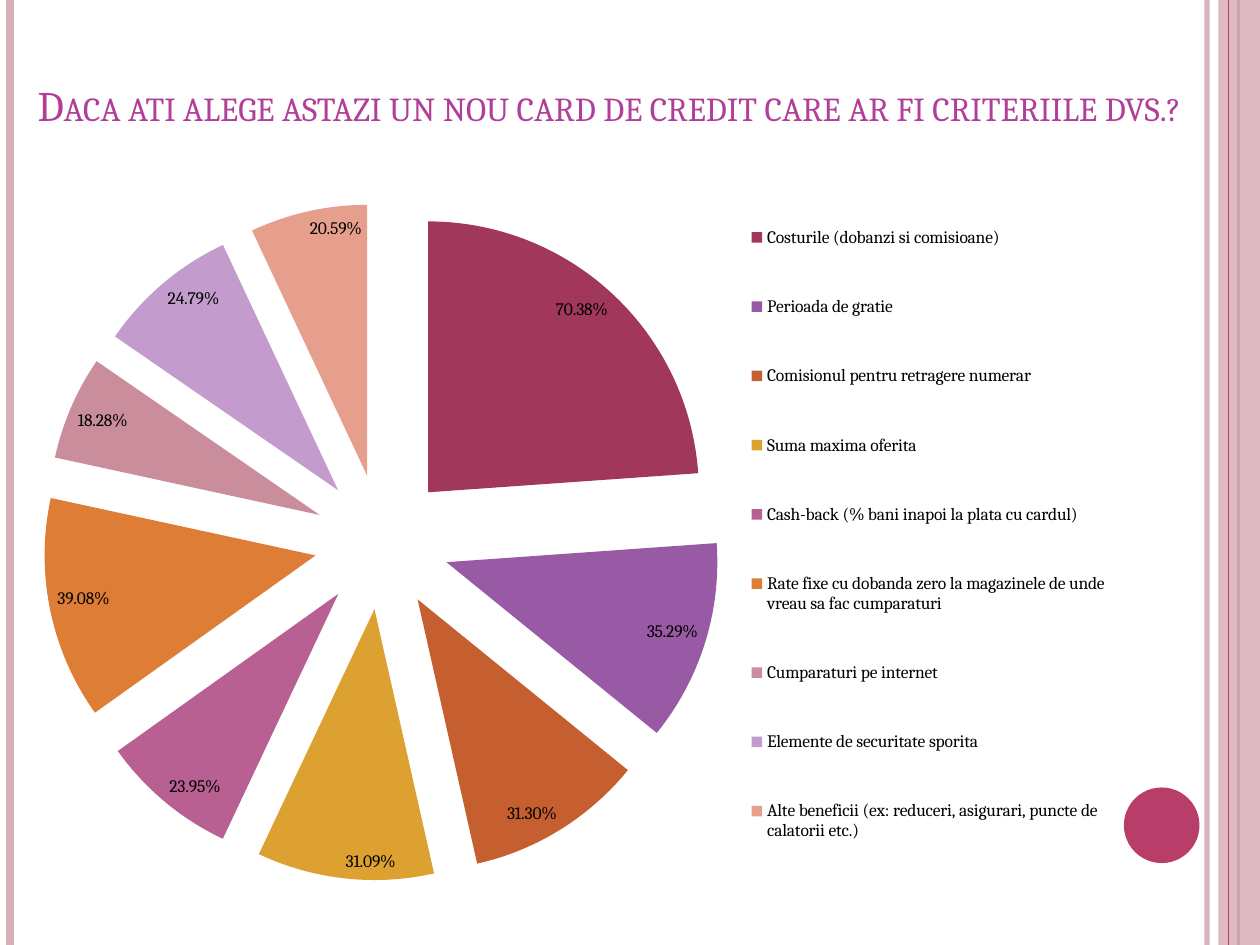
from dataclasses import dataclass

from pptx import Presentation
from pptx import util as u
from pptx.chart.data import CategoryChartData
from pptx.dml.color import RGBColor
from pptx.enum import chart as ch, shapes, text
from pptx.oxml import parse_xml
from pptx.oxml.ns import nsdecls, qn


@dataclass(frozen=True)
class Theme:
    font: str = "Cambria"
    title_size: int = 24
    chart_size: int = 10
    title: str = "B13F9A"
    ink: str = "000000"
    rose: str = "D8AFB9"
    berry: str = "B83D68"


@dataclass(frozen=True)
class Rule:
    x: float
    color: str
    width: float
    opacity: int = 100


@dataclass(frozen=True)
class Criterion:
    label: str
    share: float
    color: str


THEME = Theme()
PAGE_WIDTH, PAGE_HEIGHT = 10, 7.5
TITLE = "Daca ati alege astazi un nou card de credit care ar fi criteriile dvs.?"

RULES_BEHIND = [
    Rule(9.58, THEME.rose, 3, 93),
    Rule(0.08, THEME.rose, 4.5),
    Rule(9.83, THEME.berry, 1.5),
]
RULE_IN_FRONT = Rule(9.75, THEME.berry, 0.75)

CRITERIA = [
    Criterion("Costurile (dobanzi si comisioane)", 0.7038, "A1375B"),
    Criterion("Perioada de gratie", 0.3529, "985AA5"),
    Criterion("Comisionul pentru retragere numerar", 0.3130, "C55F2F"),
    Criterion("Suma maxima oferita", 0.3109, "DDA132"),
    Criterion("Cash-back (% bani inapoi la plata cu cardul)", 0.2395, "B86091"),
    Criterion("Rate fixe cu dobanda zero la magazinele de unde vreau sa fac cumparaturi",
              0.3908, "DE7D36"),
    Criterion("Cumparaturi pe internet", 0.1828, "CA8D9B"),
    Criterion("Elemente de securitate sporita", 0.2479, "C39BCC"),
    Criterion("Alte beneficii (ex: reduceri, asigurari, puncte de calatorii etc.)",
              0.2059, "E69F8C"),
]


def rgb(color: str) -> RGBColor:
    return RGBColor.from_string(color)


def set_opacity(props, percent: int) -> None:
    """Make the first solid colour under props partly transparent."""
    color = next(props.iter(qn("a:srgbClr")))
    color.append(parse_xml(f'<a:alpha {nsdecls("a")} val="{percent * 1000}"/>'))


def draw_rule(page, rule: Rule) -> None:
    x = u.Inches(rule.x)
    line = page.shapes.add_connector(
        shapes.MSO_CONNECTOR.STRAIGHT, x, 0, x, u.Inches(PAGE_HEIGHT))
    line.line.color.rgb = rgb(rule.color)
    line.line.width = u.Pt(rule.width)
    props = line._element.spPr
    if rule.opacity < 100:
        set_opacity(props, rule.opacity)
    props.append(parse_xml(f'<a:effectLst {nsdecls("a")}/>'))


def draw_block(page, kind, box: tuple, color: str, opacity: int = 100) -> None:
    block = page.shapes.add_shape(kind, *map(u.Inches, box))
    block.shadow.inherit = False
    block.fill.solid()
    block.fill.fore_color.rgb = rgb(color)
    block.line.fill.background()
    if opacity < 100:
        set_opacity(block._element.spPr, opacity)


def write_title(page) -> None:
    title = page.shapes.title
    title.left, title.top, title.width, title.height = map(
        u.Inches, (0.17, 0.3, 9.33, 0.78))
    frame = title.text_frame
    frame.word_wrap = True
    frame.auto_size = text.MSO_AUTO_SIZE.NONE
    frame.vertical_anchor = text.MSO_ANCHOR.BOTTOM
    para = frame.paragraphs[0]
    para.alignment = text.PP_ALIGN.CENTER
    span = para.add_run()
    span.text = TITLE
    span.font.name = THEME.font
    span.font.size = u.Pt(THEME.title_size)
    span.font.color.rgb = rgb(THEME.title)
    span.font._element.set("cap", "small")


def manual_layout(x: float, y: float, w: float, h: float, inner: bool = False):
    """Layout element placing a chart part by fractions of the chart."""
    target = '<c:layoutTarget val="inner"/>' if inner else ""
    modes = '<c:xMode val="edge"/><c:yMode val="edge"/>'
    place = "".join(f'<c:{name} val="{value}"/>'
                    for name, value in zip("xywh", (x, y, w, h)))
    return parse_xml(f'<c:layout {nsdecls("c")}><c:manualLayout>{target}{modes}{place}'
                     '</c:manualLayout></c:layout>')


def draw_pie(page) -> None:
    data = CategoryChartData(number_format="0.00%")
    data.categories = [item.label for item in CRITERIA]
    data.add_series("Series 1", [item.share for item in CRITERIA])
    chart = page.shapes.add_chart(
        ch.XL_CHART_TYPE.PIE_EXPLODED,
        *map(u.Inches, (0.17, 1.17, 8.67, 6.08)), data).chart
    chart.has_title = False
    chart.font.name = THEME.font
    chart.font.size = u.Pt(THEME.chart_size)
    chart.font.color.rgb = rgb(THEME.ink)

    # Slices
    plot = chart.plots[0]
    plot.vary_by_categories = True
    series = plot.series[0]
    for explosion in series._element.findall(qn("c:explosion")):
        explosion.set("val", "25")
    for index, item in enumerate(CRITERIA):
        point = series.points[index]
        point.format.fill.solid()
        point.format.fill.fore_color.rgb = rgb(item.color)
        point.format.line.fill.background()
        bubble = point._element.xpath(f"c:dPt[c:idx/@val='{index}']/c:spPr")[0]
        bubble.addprevious(parse_xml(f'<c:explosion {nsdecls("c")} val="25"/>'))

    # Value labels
    plot.has_data_labels = True
    labels = plot.data_labels
    labels.show_value = True
    labels.show_percentage = False
    labels.number_format = "0.00%"
    labels.number_format_is_linked = False
    labels.position = ch.XL_LABEL_POSITION.INSIDE_END

    # Legend and plot placement
    chart.has_legend = True
    legend = chart.legend
    legend.position = ch.XL_LEGEND_POSITION.RIGHT
    legend.include_in_layout = False
    area = chart._chartSpace.chart.plotArea
    for old in area.findall(qn("c:layout")):
        area.remove(old)
    area.insert(0, manual_layout(0.02, 0.07, 0.62, 0.89, inner=True))
    entries = legend._element
    for old in entries.findall(qn("c:layout")):
        entries.remove(old)
    entries.find(qn("c:legendPos")).addnext(manual_layout(0.66, 0.04, 0.34, 0.93))


def main() -> None:
    deck = Presentation()
    deck.slide_width = u.Inches(PAGE_WIDTH)
    deck.slide_height = u.Inches(PAGE_HEIGHT)
    page = deck.slides.add_slide(deck.slide_layouts[5])

    # Side decoration
    for rule in RULES_BEHIND:
        draw_rule(page, rule)
    draw_block(page, shapes.MSO_SHAPE.RECTANGLE,
               (9.67, 0, 0.33, PAGE_HEIGHT), THEME.rose, 87)
    draw_rule(page, RULE_IN_FRONT)
    draw_block(page, shapes.MSO_SHAPE.OVAL, (8.92, 6.25, 0.6, 0.6), THEME.berry)

    # Content
    write_title(page)
    draw_pie(page)
    deck.save("out.pptx")


if __name__ == "__main__":
    main()
